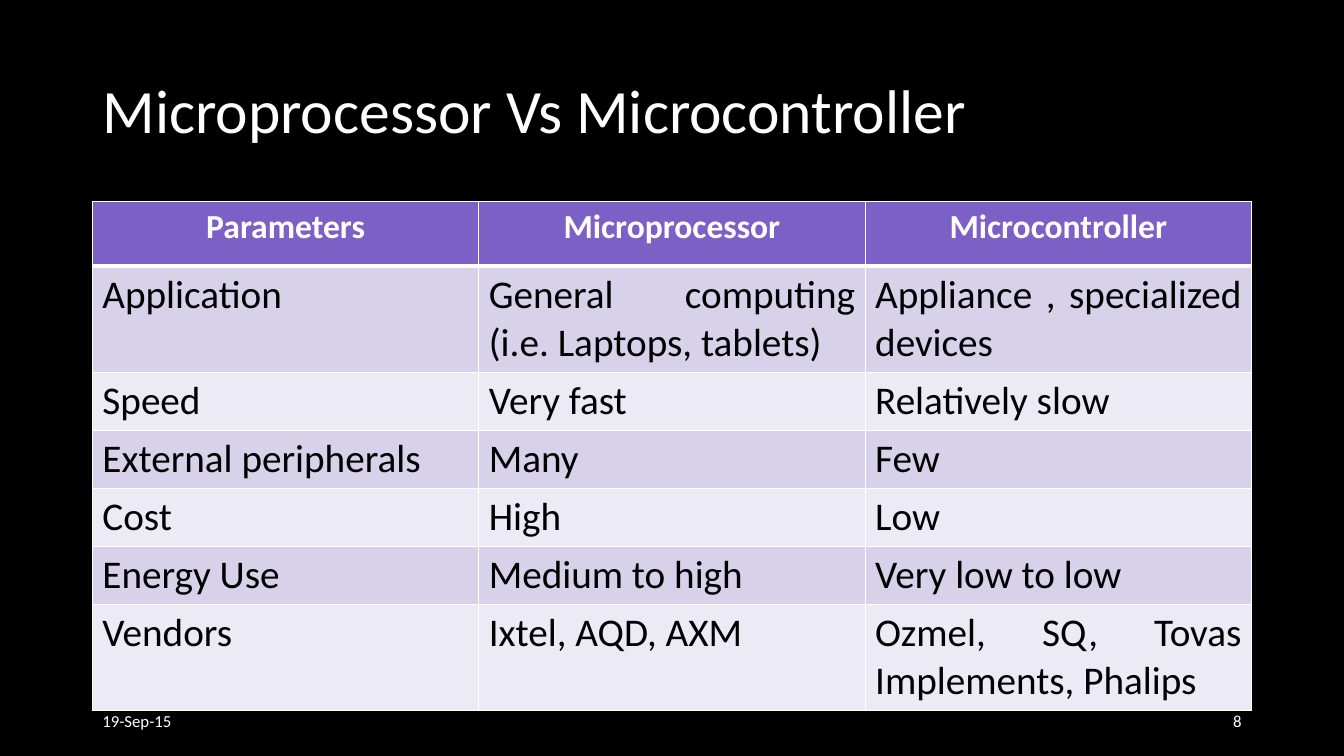
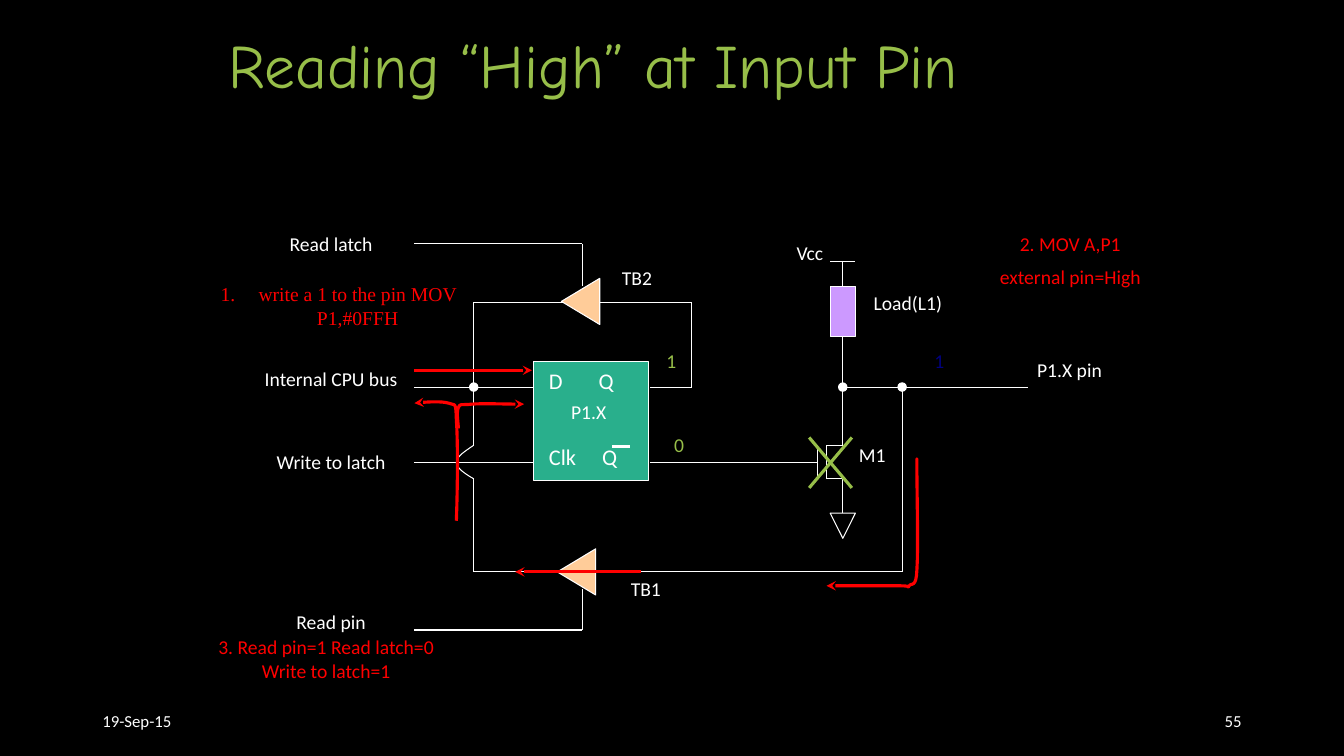
from pptx import Presentation
from pptx.dml.color import RGBColor
from pptx.enum import shapes, text
from pptx.oxml import ns, xmlchemy
from pptx.util import Pt
from lxml import etree

BLACK, WHITE, RED, GREEN = "000000", "FFFFFF", "FF0000", "97BE49"
NAVY, TEAL, PEACH, LILAC = "000080", "29AF8C", "FFCC99", "CC99FF"
HEADER, BAND_DARK, BAND_LIGHT = "7C60C6", "D7D2EA", "ECEAF5"
FONT = "Calibri"
LEFT, CENTER, RIGHT, JUSTIFY = (text.PP_ALIGN.LEFT, text.PP_ALIGN.CENTER,
                                text.PP_ALIGN.RIGHT, text.PP_ALIGN.JUSTIFY)
TOP, MIDDLE = text.MSO_ANCHOR.TOP, text.MSO_ANCHOR.MIDDLE
SHAPE = shapes.MSO_SHAPE

ROWS = [
    ("Parameters", "Microprocessor", "Microcontroller"),
    ("Application", "General computing (i.e. Laptops, tablets)",
     "Appliance , specialized devices"),
    ("Speed", "Very fast", "Relatively slow"),
    ("External peripherals", "Many", "Few"),
    ("Cost", "High", "Low"),
    ("Energy Use", "Medium to high", "Very low to low"),
    ("Vendors", "Ixtel, AQD, AXM", "Ozmel, SQ, Tovas Implements, Phalips"),
]


# Formatting helpers
def rgb(value):
    return RGBColor.from_string(value)


def sub(parent, tag, **attrs):
    return etree.SubElement(parent, ns.qn(tag), **attrs)


def write(tf, content, size=14, color=WHITE, font=FONT, bold=False,
          align=CENTER, anchor=TOP, spacing=None):
    tf.word_wrap = True
    tf.auto_size = text.MSO_AUTO_SIZE.NONE
    tf.vertical_anchor = anchor
    for i, line in enumerate(content.split("\n")):
        p = tf.add_paragraph() if i else tf.paragraphs[0]
        p.alignment = align
        p.line_spacing = spacing
        p.space_before = Pt(size / 2 if i else 0)
        r = p.add_run()
        r.text = line
        r.font.size, r.font.name, r.font.bold = Pt(size), font, bold
        r.font.color.rgb = rgb(color)


def stroke(sp, color, width, arrow=False):
    sp.line.color.rgb = rgb(color)
    sp.line.width = Pt(width)
    if arrow:
        ln = sp._element.spPr.find(ns.qn("a:ln"))
        sub(ln, "a:tailEnd", type="stealth")


# Elements
def label(s, x, y, w, h, content, **fmt):
    sp = s.shapes.add_textbox(Pt(x), Pt(y), Pt(w), Pt(h))
    write(sp.text_frame, content, **fmt)
    return sp


def box(s, kind, x, y, w, h, fill=None, rotation=0):
    sp = s.shapes.add_shape(kind, Pt(x), Pt(y), Pt(w), Pt(h))
    sp.shadow.inherit = False
    sp.rotation = rotation
    if fill:
        sp.fill.solid()
        sp.fill.fore_color.rgb = rgb(fill)
    else:
        sp.fill.background()
    stroke(sp, WHITE, 0.75)
    return sp


def line(s, x1, y1, x2, y2, color=WHITE, width=0.75, arrow=False):
    sp = s.shapes.add_connector(shapes.MSO_CONNECTOR.STRAIGHT,
                                Pt(x1), Pt(y1), Pt(x2), Pt(y2))
    stroke(sp, color, width, arrow)
    sub(sp._element.spPr, "a:effectLst")
    return sp


def wire(s, *points):
    for start, end in zip(points, points[1:]):
        line(s, *start, *end)


def curve(s, points, color=WHITE, width=0.75, arrow=False, steps=8):
    """Draw cubic curves: a start point, then three points for each curve."""
    path = []
    for i in range(0, len(points) - 1, 3):
        a, b, c, d = points[i:i + 4]
        for t in (n / steps for n in range(1, steps + 1)):
            u = 1 - t
            path.append(tuple(
                Pt(u**3 * a[k] + 3 * u * u * t * b[k] + 3 * u * t * t * c[k] + t**3 * d[k])
                for k in (0, 1)))
    x, y = points[0]
    builder = s.shapes.build_freeform(Pt(x), Pt(y))
    builder.add_line_segments(path, close=False)
    sp = builder.convert_to_shape()
    sp.shadow.inherit = False
    sp.fill.background()
    stroke(sp, color, width, arrow)


def style_cell(cell, content, fill, top, bottom, **fmt):
    write(cell.text_frame, content, **fmt)
    cell.fill.solid()
    cell.fill.fore_color.rgb = rgb(fill)
    tc_pr = cell._tc.get_or_add_tcPr()
    edges = (("a:lnL", 1), ("a:lnR", 1), ("a:lnT", top), ("a:lnB", bottom))
    for i, (tag, width) in enumerate(edges):
        ln = sub(tc_pr, tag, w=str(Pt(width)))
        sub(sub(ln, "a:solidFill"), "a:srgbClr", val=WHITE)
        tc_pr.insert(i, ln)


def new_slide(prs, title, number, x, y, w, h, **fmt):
    s = prs.slides.add_slide(prs.slide_layouts[5])
    sp = s.shapes.title
    sp.left, sp.top, sp.width, sp.height = Pt(x), Pt(y), Pt(w), Pt(h)
    write(sp.text_frame, title, size=44, align=LEFT, spacing=0.9, **fmt)
    for left, content, align in ((66, "19-Sep-15", LEFT), (678, number, RIGHT)):
        label(s, left, 500.5, 216, 28.75, content, size=12, align=align, anchor=MIDDLE)
    return s


# Slides
def comparison_slide(prs):
    s = new_slide(prs, "Microprocessor Vs Microcontroller", "8",
                  66, 28.75, 828, 104.4, anchor=MIDDLE)
    heights = [46, 76, 41.4, 41.4, 41.4, 41.4, 76]
    table = s.shapes.add_table(len(ROWS), 3, Pt(66), Pt(144),
                               Pt(828), Pt(sum(heights))).table
    for i, (row, height) in enumerate(zip(ROWS, heights)):
        table.rows[i].height = Pt(height)
        for j, content in enumerate(row):
            cell = table.cell(i, j)
            if i == 0:
                style_cell(cell, content, HEADER, 1, 3, size=24, bold=True)
            else:
                style_cell(cell, content, BAND_DARK if i % 2 else BAND_LIGHT,
                           3 if i == 1 else 1, 1,
                           size=28, color=BLACK, align=JUSTIFY)


def draw_circuit(s):
    # Shared wire levels and columns
    bus_y, write_y, tb2_y, tb1_y = 276.5, 330.5, 216, 408.5
    bus_x, left_x, enable_x, drain_x, pin_x = 296, 338.4, 416, 602, 644.4

    # Latch
    box(s, SHAPE.RECTANGLE, 381, 258.5, 82, 84.5, TEAL)
    for x, y, name in ((385, 258.5, "D"), (420.5, 258.5, "Q"),
                       (385, 313, "Clk"), (423, 313, "Q")):
        label(s, x, y, 40, 27, name, size=16, align=LEFT)
    line(s, 437, 319, 450, 319, width=2)

    # Buffers
    for center_x, center_y in ((414.7, 215.3), (411.8, tb1_y)):
        box(s, SHAPE.ISOSCELES_TRIANGLE, center_x - 16.5, center_y - 13.7,
            33, 27.4, PEACH, rotation=270)

    # Load
    load = box(s, SHAPE.RECTANGLE, drain_x - 9, 204.5, 18, 36, LILAC)
    line(s, drain_x, 186.5, drain_x, 204.5).end_connect(load, 0)
    line(s, drain_x, 240.5, drain_x, 318).begin_connect(load, 2)
    wire(s, (drain_x - 9, 186.5), (drain_x + 9, 186.5))

    # Transistor and ground
    wire(s, (584, 318), (584, 342))
    wire(s, (drain_x, 318), (590.4, 318), (590.4, 342), (drain_x, 342), (drain_x, 366.5))
    box(s, SHAPE.ISOSCELES_TRIANGLE, drain_x - 9, 366.5, 18, 18, rotation=180)

    # Wires
    wire(s, (bus_x, bus_y), (381, bus_y))
    wire(s, (bus_x, write_y), (381, write_y))
    wire(s, (464.5, write_y), (584, write_y))
    wire(s, (428.4, tb2_y), (494, tb2_y), (494, bus_y), (464.5, bus_y))
    wire(s, (drain_x, bus_y), (734.4, bus_y))
    wire(s, (pin_x, bus_y), (pin_x, tb1_y), (428.4, tb1_y))
    wire(s, (402, tb2_y), (left_x, tb2_y), (left_x, 318))
    wire(s, (left_x, 342), (left_x, tb1_y), (398, tb1_y))
    wire(s, (bus_x, 174), (enable_x, 174), (enable_x, 204.5))
    wire(s, (bus_x, 450), (enable_x, 450), (enable_x, 420.5))
    curve(s, [(left_x, 318), (332, 322.5), (326, 326), (326, write_y),
              (326, 334), (332, 338.5), (left_x, 342)])
    for x in (left_x, drain_x, pin_x):
        box(s, SHAPE.OVAL, x - 3, bus_y - 3, 6, 6, WHITE)

    # Names
    for x, y, w, name in (
            (176.5, 162, 120, "Read latch"), (176.5, 432, 120, "Read pin"),
            (176.5, 318, 120, "Write to latch"), (176.5, 258.5, 120, "Internal CPU bus"),
            (554.5, 168.5, 48, "Vcc"), (603.5, 204.5, 90, "Load(L1)"),
            (602, 312.5, 42, "M1"), (728, 252, 72, "P1.X pin"),
            (384.5, 282, 72, "P1.X"), (428.4, 408.5, 66, "TB1"), (422, 186.5, 66, "TB2")):
        label(s, x, y, w, 24, name)


def draw_signals(s):
    red = {"color": RED, "width": 2.25, "arrow": True}

    # Signal flow
    line(s, 296, 264.5, 380, 264.5, **red)
    line(s, 458, 408.5, 368, 408.5, **red)
    curve(s, [(655, 331), (655, 327.5), (655, 324), (655, 337),
              (655, 349), (656, 393), (655, 407), (654.5, 420.5), (651, 416), (649.5, 418.5),
              (647, 420.5), (653, 418.5), (643, 418.5), (633.5, 418.5), (612, 418.5),
              (590.4, 418.5)], **red)
    curve(s, [(326, 372), (327, 343.5), (327, 314), (326, 300),
              (325.5, 286.5), (325.5, 290), (320.5, 288), (315.5, 286.5), (305, 287),
              (296, 288)], **red)
    curve(s, [(327.5, 306), (327, 300), (326, 294), (327.5, 291),
              (329, 288), (329, 289.5), (337, 288.7), (345, 288), (359.5, 288.7),
              (374.4, 288.7)], **red)

    # Cross over the transistor that is off
    for y1, y2 in ((312.5, 348.5), (348.5, 312.5)):
        line(s, 578, y1, 608.5, y2, color=GREEN, width=2.25)

    # Logic levels
    for x, y, level, color in ((464.5, 246, "1", GREEN), (470, 306, "0", GREEN),
                               (656, 246, "1", NAVY)):
        label(s, x, y, 30, 24, level, color=color)

    # Steps
    step = label(s, 134, 198, 216, 41, "write a 1 to the pin MOV P1,#0FFH",
                 color=RED, font="Times New Roman")
    p_pr = step.text_frame.paragraphs[0]._p.get_or_add_pPr()
    p_pr.set("marL", str(Pt(27)))
    p_pr.set("indent", str(Pt(-27)))
    sub(p_pr, "a:buFont", typeface="+mj-lt")
    sub(p_pr, "a:buAutoNum", type="arabicPeriod")
    label(s, 698.5, 162, 132, 50, "2. MOV A,P1\nexternal pin=High", color=RED)
    label(s, 146, 450, 174, 41, "3. Read pin=1 Read latch=0 Write to latch=1", color=RED)


def input_pin_slide(prs):
    s = new_slide(prs, "Reading “High” at Input Pin", "55",
                  156, 21.5, 648, 90, font="Comic Neue", color=GREEN)
    draw_circuit(s)
    draw_signals(s)


def main():
    prs = Presentation()
    prs.slide_width, prs.slide_height = Pt(960), Pt(540)
    fill = prs.slide_master.background.fill
    fill.solid()
    fill.fore_color.rgb = rgb(BLACK)
    comparison_slide(prs)
    input_pin_slide(prs)
    prs.save("out.pptx")


if __name__ == "__main__":
    main()
